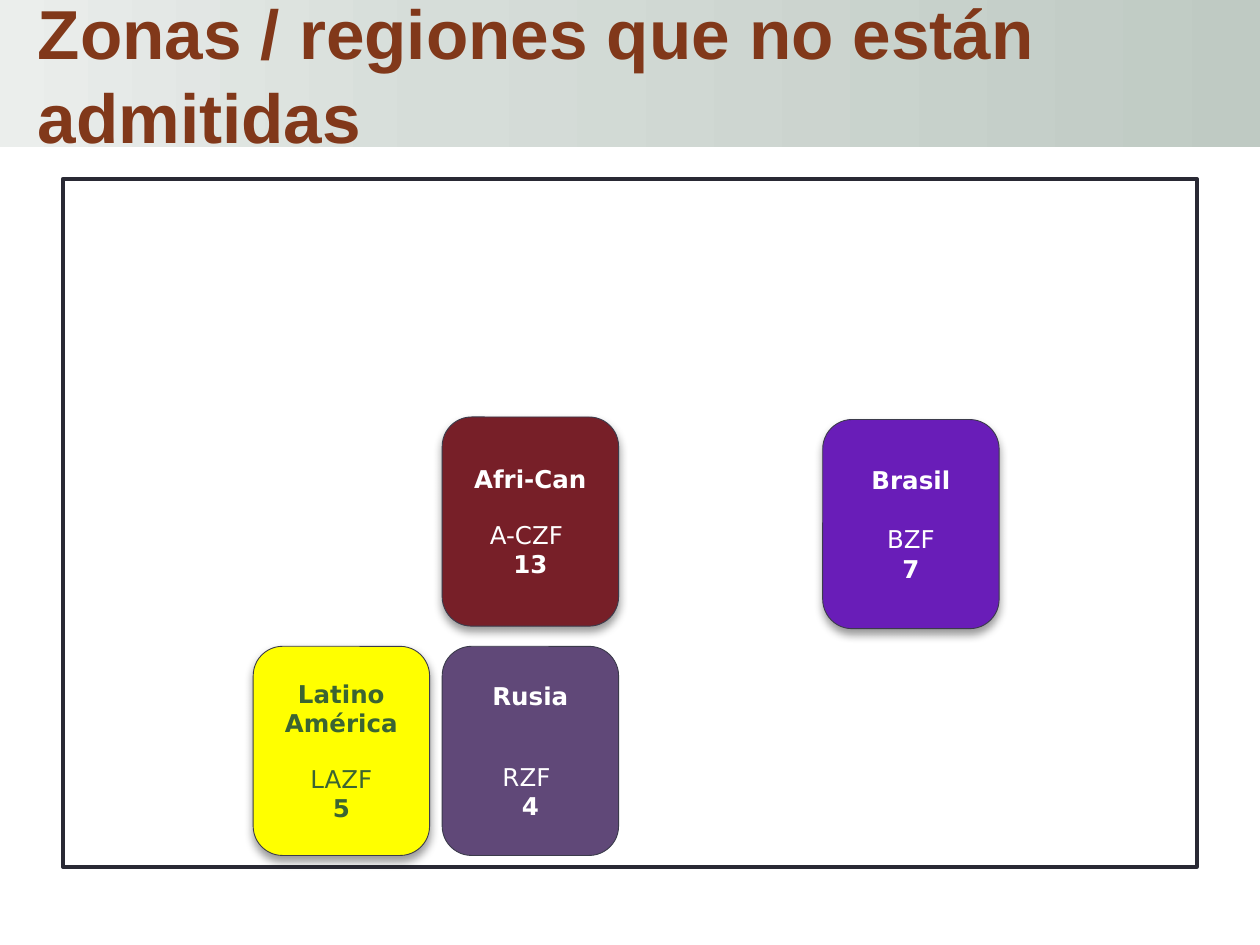
from copy import deepcopy
from dataclasses import dataclass

from lxml import etree
from pptx import Presentation
from pptx.dml.color import RGBColor
from pptx.enum.shapes import MSO_SHAPE
from pptx.enum.text import MSO_ANCHOR, PP_ALIGN
from pptx.oxml.ns import qn
from pptx.shapes.autoshape import Shape
from pptx.slide import Slide
from pptx.util import Inches, Pt

RECTANGLE = MSO_SHAPE.RECTANGLE
ROUNDED_RECTANGLE = MSO_SHAPE.ROUNDED_RECTANGLE
MIDDLE = MSO_ANCHOR.MIDDLE
LEFT = PP_ALIGN.LEFT
CENTER = PP_ALIGN.CENTER

WHITE = RGBColor(0xFF, 0xFF, 0xFF)
YELLOW = RGBColor(0xFF, 0xFF, 0x00)
GREEN = RGBColor(0x3B, 0x64, 0x32)
PURPLE = RGBColor(0x60, 0x48, 0x78)
VIOLET = RGBColor(0x69, 0x1D, 0xB8)
MAROON = RGBColor(0x77, 0x1F, 0x28)
RUST = RGBColor(0x81, 0x38, 0x1A)
FRAME_LINE = RGBColor(0x29, 0x29, 0x34)
CARD_LINE = RGBColor(0x3B, 0x3B, 0x4B)
BANNER_STOPS = (
    (0, RGBColor(0xBF, 0xCA, 0xC3)),
    (0.65, RGBColor(0xD6, 0xDD, 0xD9)),
    (1, RGBColor(0xEB, 0xEE, 0xEC)),
)

CARD_WIDTH = 1.4
CARD_HEIGHT = 1.66


@dataclass(frozen=True)
class Zone:
    name: str
    code: str
    count: int
    left: float
    top: float
    fill: RGBColor
    gap: float
    text_color: RGBColor = WHITE
    shadow: bool = True


ZONES = (
    Zone("Rusia", "RZF ", 4, 3.51, 5.13, PURPLE, 29, shadow=False),
    Zone("Latino América", "LAZF", 5, 2.01, 5.13, YELLOW, 15, GREEN),
    Zone("Afri-Can", "A-CZF ", 13, 3.51, 3.31, MAROON, 15),
    Zone("Brasil", "BZF", 7, 6.53, 3.33, VIOLET, 17),
)


def add_box(slide: Slide, kind: MSO_SHAPE, left: float, top: float,
            width: float, height: float) -> Shape:
    shape = slide.shapes.add_shape(
        kind, Inches(left), Inches(top), Inches(width), Inches(height))
    shape.shadow.inherit = False
    shape.text_frame.word_wrap = True
    shape.text_frame.vertical_anchor = MIDDLE
    return shape


def fill_and_outline(shape: Shape, fill: RGBColor, line: RGBColor, width: float) -> None:
    shape.fill.solid()
    shape.fill.fore_color.rgb = fill
    shape.line.color.rgb = line
    shape.line.width = Pt(width)


def add_shadow(shape: Shape) -> None:
    effects = shape._element.spPr.find(qn("a:effectLst"))
    shadow = etree.SubElement(
        effects, qn("a:outerShdw"), blurRad=str(Pt(5.2)), dist=str(Pt(3)),
        dir="5400000", rotWithShape="0")
    color = etree.SubElement(shadow, qn("a:srgbClr"), val="000000")
    etree.SubElement(color, qn("a:alpha"), val="40000")


def add_banner(slide: Slide, title: str) -> None:
    shape = add_box(slide, RECTANGLE, 0, 0, 10, 1.17)
    shape.line.fill.background()
    shape.fill.gradient()
    shape.fill.gradient_angle = 180
    stop_list = shape._element.spPr.find(".//" + qn("a:gsLst"))
    stop_list.append(deepcopy(stop_list[-1]))
    for stop, (position, color) in zip(shape.fill.gradient_stops, BANNER_STOPS):
        stop.position = position
        stop.color.rgb = color
    shape.text_frame.margin_left = Inches(0.3)
    paragraph = shape.text_frame.paragraphs[0]
    paragraph.text = title
    paragraph.alignment = LEFT
    paragraph.line_spacing = Pt(48)
    paragraph.font.name = "Arial"
    paragraph.font.size = Pt(39.6)
    paragraph.font.bold = True
    paragraph.font.color.rgb = RUST


def add_zone(slide: Slide, zone: Zone) -> None:
    shape = add_box(slide, ROUNDED_RECTANGLE, zone.left, zone.top,
                    CARD_WIDTH, CARD_HEIGHT)
    fill_and_outline(shape, zone.fill, CARD_LINE, 0.5)
    if zone.shadow:
        add_shadow(shape)
    frame = shape.text_frame
    lines = ((zone.name, True), (zone.code, False), (str(zone.count), True))
    for index, (text, bold) in enumerate(lines):
        paragraph = frame.add_paragraph() if index else frame.paragraphs[0]
        paragraph.text = text
        paragraph.alignment = CENTER
        paragraph.font.name = "DejaVu Sans"
        paragraph.font.size = Pt(14)
        paragraph.font.bold = bold
        paragraph.font.color.rgb = zone.text_color
    frame.paragraphs[1].space_before = Pt(zone.gap)


def main() -> None:
    presentation = Presentation()
    presentation.slide_width = Inches(10)
    presentation.slide_height = Inches(7.5)
    slide = presentation.slides.add_slide(presentation.slide_layouts[6])
    add_banner(slide, "Zonas / regiones que no están admitidas")
    frame = add_box(slide, RECTANGLE, 0.5, 1.42, 9, 5.46)
    fill_and_outline(frame, WHITE, FRAME_LINE, 2.25)
    for zone in ZONES:
        add_zone(slide, zone)
    presentation.save("out.pptx")


if __name__ == "__main__":
    main()
